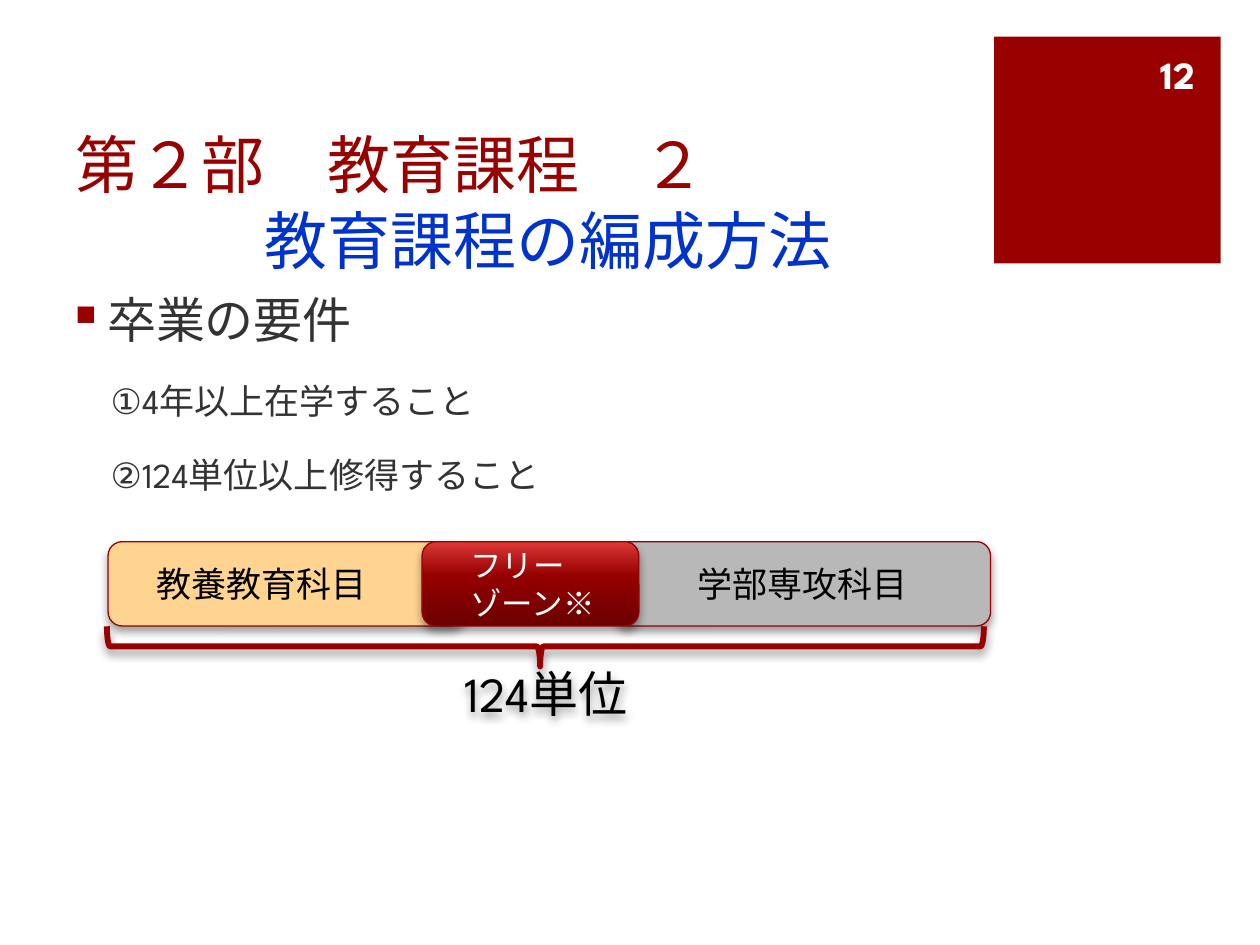
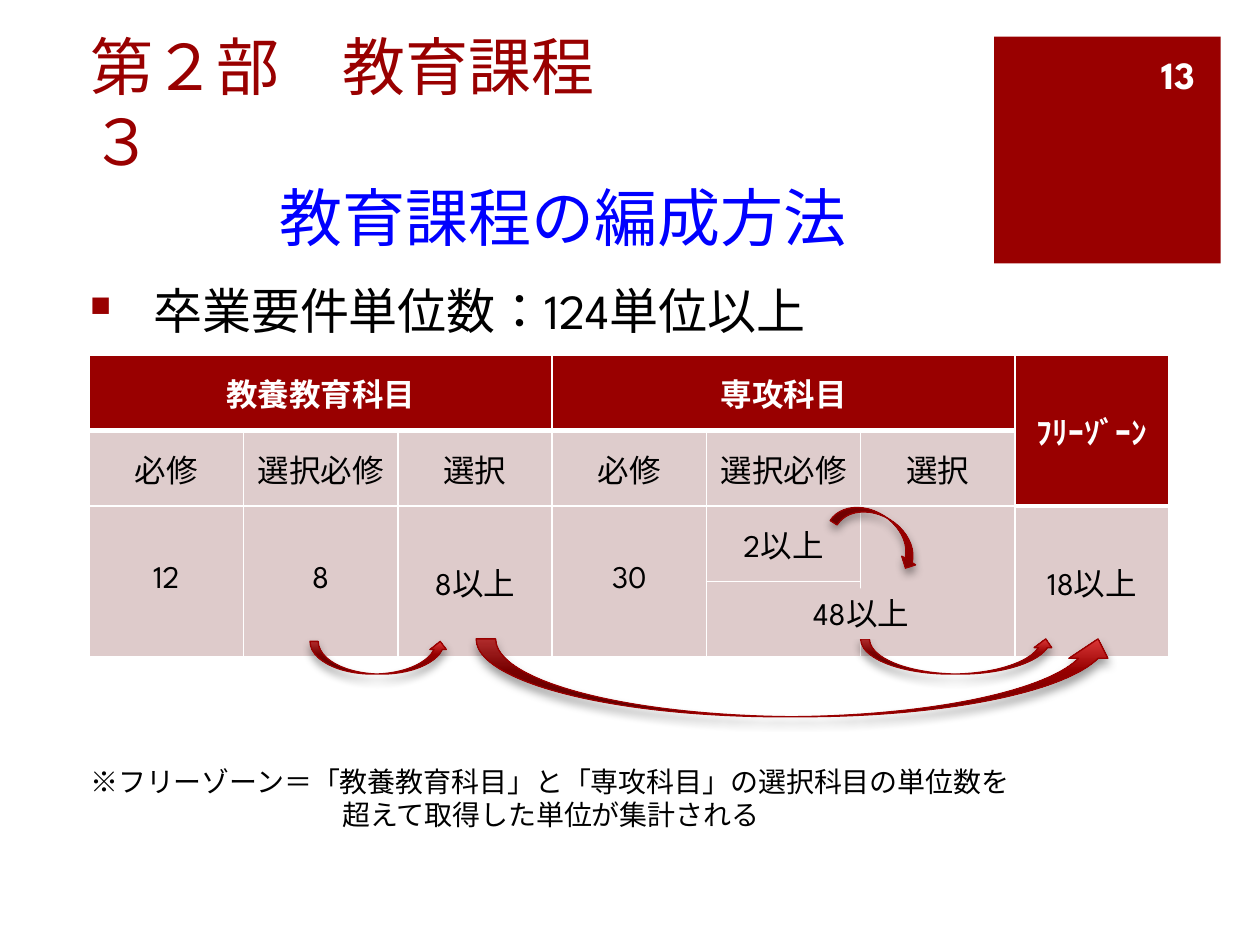
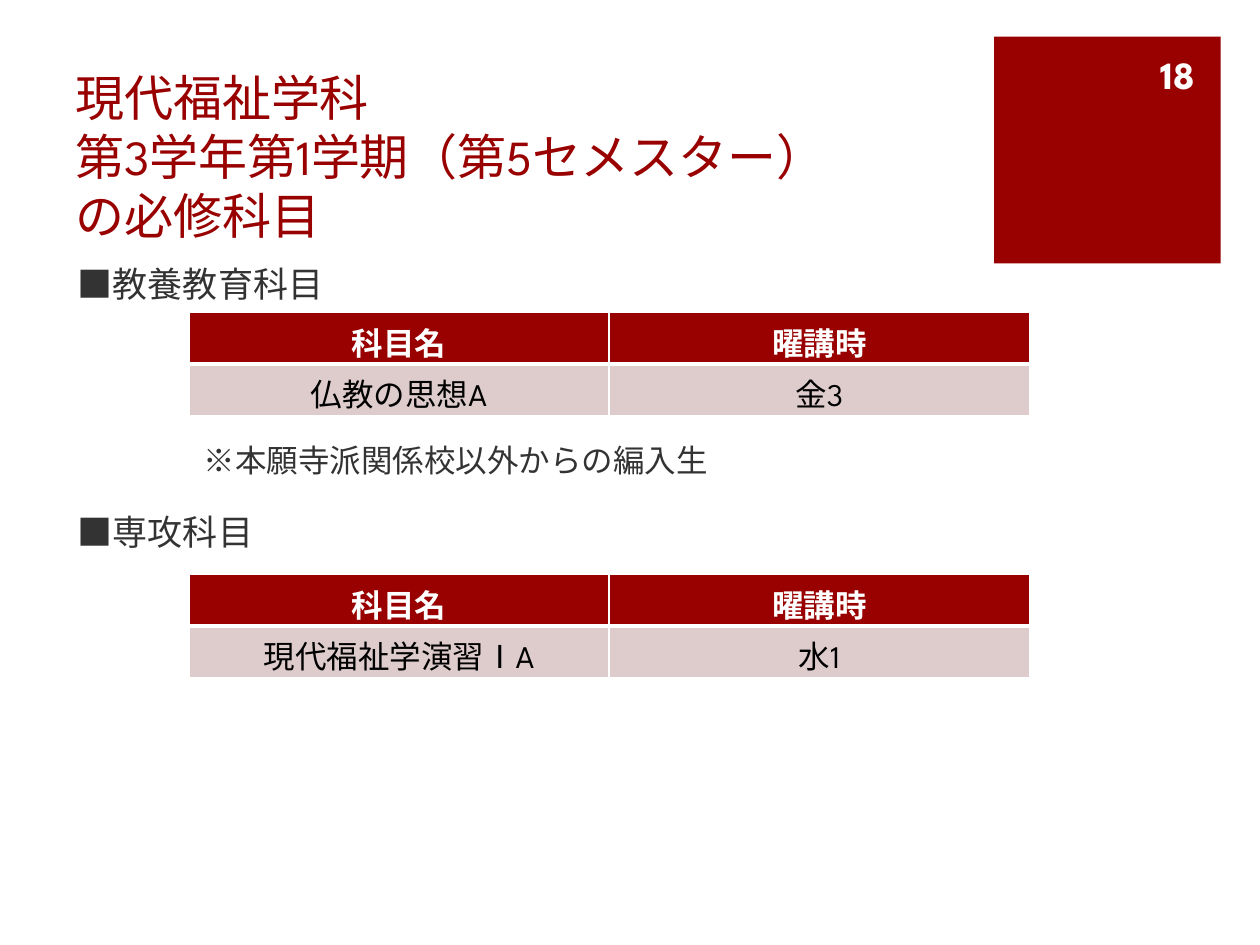
from copy import deepcopy
from dataclasses import dataclass

from lxml import etree
from pptx import Presentation
from pptx.dml.color import RGBColor
from pptx.enum.lang import MSO_LANGUAGE_ID
from pptx.enum.shapes import MSO_SHAPE
from pptx.enum.text import MSO_ANCHOR, PP_ALIGN
from pptx.oxml.ns import qn
from pptx.util import Cm, Pt

RECT, ROUNDED = MSO_SHAPE.RECTANGLE, MSO_SHAPE.ROUNDED_RECTANGLE
BRACE = MSO_SHAPE.LEFT_BRACE
UP_ARROW, DOWN_ARROW = MSO_SHAPE.CURVED_UP_ARROW, MSO_SHAPE.CURVED_DOWN_ARROW
LEFT, CENTER, RIGHT = PP_ALIGN.LEFT, PP_ALIGN.CENTER, PP_ALIGN.RIGHT
TOP, MIDDLE, BOTTOM = MSO_ANCHOR.TOP, MSO_ANCHOR.MIDDLE, MSO_ANCHOR.BOTTOM
JAPANESE = MSO_LANGUAGE_ID.JAPANESE

FONT = "League Spartan"
CRIMSON = RGBColor(0x99, 0x00, 0x00)
COBALT = RGBColor(0x00, 0x33, 0xCC)
BLUE = RGBColor(0x00, 0x00, 0xFF)
CHARCOAL = RGBColor(0x33, 0x33, 0x33)
BLACK = RGBColor(0x00, 0x00, 0x00)
WHITE = RGBColor(0xFF, 0xFF, 0xFF)
APRICOT = RGBColor(0xFF, 0xD4, 0x91)
GRAY = RGBColor(0xB8, 0xB8, 0xB8)
PINK = RGBColor(0xDE, 0xCC, 0xCC)
ROSE = RGBColor(0xDE, 0xCB, 0xCB)
RED_GRADIENT = (
    (0, RGBColor(0x6C, 0x00, 0x00)),
    (0.6, RGBColor(0x96, 0x00, 0x00)),
    (1, RGBColor(0xDC, 0x38, 0x38)),
)


@dataclass(frozen=True)
class Box:
    """Left, top, width and height in centimetres."""
    left: float
    top: float
    width: float
    height: float

    def lengths(self) -> tuple:
        return Cm(self.left), Cm(self.top), Cm(self.width), Cm(self.height)


@dataclass(frozen=True)
class Line:
    """One paragraph; indent in centimetres, space before in points."""
    text: str
    size: float
    color: RGBColor = BLACK
    bold: bool = False
    align: PP_ALIGN = LEFT
    indent: float = 0
    before: float = 0
    bullet: bool = False


@dataclass(frozen=True)
class Block:
    """A filled shape of the diagram; no fill colour means the red gradient."""
    box: Box
    kind: MSO_SHAPE
    lines: tuple = ()
    fill: RGBColor | None = None
    rotation: float = 0


@dataclass(frozen=True)
class Span:
    """A merged range of table cells."""
    row: int
    column: int
    rows: int
    columns: int


def add_bullet(paragraph, indent: float) -> None:
    properties = paragraph._p.get_or_add_pPr()
    properties.set("indent", str(-Cm(indent)))
    color = etree.SubElement(properties, qn("a:buClr"))
    etree.SubElement(color, qn("a:srgbClr"), val=str(CRIMSON))
    etree.SubElement(properties, qn("a:buSzPct"), val="58000")
    etree.SubElement(properties, qn("a:buChar"), char="■")


def write_lines(frame, lines: tuple) -> None:
    for number, line in enumerate(lines):
        paragraph = frame.add_paragraph() if number else frame.paragraphs[0]
        paragraph.alignment = line.align
        paragraph.space_before = Pt(line.before)
        if line.indent:
            paragraph._p.get_or_add_pPr().set("marL", str(Cm(line.indent)))
        if line.bullet:
            add_bullet(paragraph, line.indent)
        run = paragraph.add_run()
        run.text = line.text
        font = run.font
        font.name, font.size, font.bold = FONT, Pt(line.size), line.bold
        font.color.rgb = line.color
        font.language_id = JAPANESE


def add_text(slide, box: Box, lines: tuple, anchor: MSO_ANCHOR = TOP):
    text_box = slide.shapes.add_textbox(*box.lengths())
    frame = text_box.text_frame
    frame.word_wrap = True
    frame.vertical_anchor = anchor
    write_lines(frame, lines)
    return text_box


def add_shadow(shape) -> None:
    shape.shadow.inherit = False
    effects = shape._element.spPr.find(qn("a:effectLst"))
    shadow = etree.SubElement(
        effects, qn("a:outerShdw"), blurRad=str(Pt(5.2)), dist=str(Pt(3)),
        dir="5400000", rotWithShape="0")
    color = etree.SubElement(shadow, qn("a:srgbClr"), val=str(BLACK))
    etree.SubElement(color, qn("a:alpha"), val="40000")


def fill_red_gradient(shape) -> None:
    shape.fill.gradient()
    shape.fill.gradient_angle = 90
    stops = shape._element.spPr.find(".//" + qn("a:gsLst"))
    stops.insert(1, deepcopy(stops[0]))
    for stop, (position, color) in zip(shape.fill.gradient_stops, RED_GRADIENT):
        stop.position = position
        stop.color.rgb = color


def add_plain_rectangle(slide, box: Box, color: RGBColor):
    rectangle = slide.shapes.add_shape(RECT, *box.lengths())
    rectangle.shadow.inherit = False
    rectangle.fill.solid()
    rectangle.fill.fore_color.rgb = color
    rectangle.line.fill.background()
    return rectangle


def add_block(slide, block: Block) -> None:
    shape = slide.shapes.add_shape(block.kind, *block.box.lengths())
    shape.rotation = block.rotation
    if block.fill is None:
        fill_red_gradient(shape)
    else:
        shape.fill.solid()
        shape.fill.fore_color.rgb = block.fill
    shape.line.color.rgb = CRIMSON
    shape.line.width = Pt(0.75)
    add_shadow(shape)
    shape.text_frame.vertical_anchor = MIDDLE
    write_lines(shape.text_frame, block.lines)


def add_brace(slide, box: Box) -> None:
    brace = slide.shapes.add_shape(BRACE, *box.lengths())
    brace.rotation = 270
    brace.adjustments[0], brace.adjustments[1] = 0.083, 0.494
    brace.fill.background()
    brace.line.color.rgb = CRIMSON
    brace.line.width = Pt(3.35)
    add_shadow(brace)


def style_cell(cell, fill: RGBColor, bottom: float) -> None:
    properties = cell._tc.get_or_add_tcPr()
    for edge, width in (("a:lnL", 1), ("a:lnR", 1), ("a:lnB", bottom)):
        border = etree.SubElement(properties, qn(edge), w=str(Pt(width)))
        color = etree.SubElement(border, qn("a:solidFill"))
        etree.SubElement(color, qn("a:srgbClr"), val=str(WHITE))
    cell.fill.solid()
    cell.fill.fore_color.rgb = fill


def add_grid(slide, left: float, top: float, column_width: float,
             row_height: float, rows: tuple, spans: tuple = (),
             headers: frozenset = frozenset(), anchor: MSO_ANCHOR = TOP) -> None:
    """Draw a table; row 0 and the cells in headers get the header style."""
    row_count, column_count = len(rows), len(rows[0])
    box = Box(left, top, column_width * column_count, row_height * row_count)
    table = slide.shapes.add_table(row_count, column_count, *box.lengths()).table
    for column in table.columns:
        column.width = Cm(column_width)
    for row in table.rows:
        row.height = Cm(row_height)
    for r, texts in enumerate(rows):
        for c, text in enumerate(texts):
            cell = table.cell(r, c)
            header = r == 0 or (r, c) in headers
            body_fill = PINK if r == 1 else ROSE
            style_cell(cell, CRIMSON if header else body_fill, 3 if header else 1)
            cell.vertical_anchor = anchor
            if text:
                color = WHITE if header else BLACK
                write_lines(cell.text_frame,
                            (Line(text, 18, color, header, CENTER),))
    for span in spans:
        last = table.cell(span.row + span.rows - 1, span.column + span.columns - 1)
        table.cell(span.row, span.column).merge(last)


def start_slide(deck, number: str, title_box: Box, title: tuple):
    """Add a blank slide with the numbered crimson square and its title."""
    slide = deck.slides.add_slide(deck.slide_layouts[6])
    add_plain_rectangle(slide, Box(20.04, 0.74, 4.57, 4.57), CRIMSON)
    add_text(slide, title_box, title, BOTTOM)
    add_text(slide, Box(22.94, 0.99, 1.4, 1.02),
             (Line(number, 22, WHITE, True, RIGHT),), MIDDLE)
    return slide


def curriculum_title(first_lines: tuple, topic_color: RGBColor) -> tuple:
    part = tuple(Line(text, 36, CRIMSON) for text in first_lines)
    return part + (Line("教育課程の編成方法", 36, topic_color, indent=3.81),)


def build_requirements(deck) -> None:
    title = curriculum_title(("第２部　教育課程　２",), COBALT)
    slide = start_slide(deck, "12", Box(1.27, 2.54, 18.75, 3.17), title)
    add_text(slide, Box(1.27, 5.71, 22.68, 12.22), (
        Line("卒業の要件", 28, CHARCOAL, indent=0.64, bullet=True),
        Line("①4年以上在学すること", 20, CHARCOAL, indent=0.71, before=18),
        Line("②124単位以上修得すること", 20, CHARCOAL, indent=0.71, before=18),
    ))
    top, height = 10.92, 1.7
    for block in (
        Block(Box(2.18, top, 7.19, height), ROUNDED,
              (Line("教養教育科目", 20, indent=0.64),), APRICOT),
        Block(Box(12.4, top, 7.57, height), ROUNDED,
              (Line("学部専攻科目", 20, align=CENTER),), GRAY),
        Block(Box(8.51, top, 4.37, height), ROUNDED,
              tuple(Line(text, 18, WHITE, indent=0.64)
                    for text in ("フリー", "ゾーン※"))),
    ):
        add_block(slide, block)
    add_brace(slide, Box(10.59, 4.19, 0.81, 17.68))
    total = add_text(slide, Box(8.23, 13.03, 5.56, 1.88),
                     (Line("124単位", 28, align=CENTER),), MIDDLE)
    add_shadow(total)


def build_credits(deck) -> None:
    title = curriculum_title(("第２部　教育課程", "３"), BLUE)
    slide = start_slide(deck, "13", Box(1.57, 1.57, 18.41, 3.68), title)
    add_text(slide, Box(1.57, 5.44, 20.42, 11.53), (
        Line("卒業要件単位数：124単位以上", 28, indent=1.27, bullet=True),
        Line("※フリーゾーン＝「教養教育科目」と「専攻科目」の選択科目の単位数を",
             16, before=243),
        Line("超えて取得した単位が集計される", 16, indent=5.08),
    ), MIDDLE)
    kinds = ("必修", "選択必修", "選択")
    add_grid(
        slide, 1.8, 7.16, 3.11, 1.52,
        (
            ("教養教育科目", "", "", "専攻科目", "", "", "ﾌﾘｰｿﾞｰﾝ"),
            kinds * 2 + ("",),
            ("12", "8", "8以上", "30", "2以上", "", "18以上"),
            ("",) * 7,
        ),
        spans=(Span(0, 0, 1, 3), Span(0, 3, 1, 3), Span(0, 6, 2, 1))
        + tuple(Span(2, column, 2, 1) for column in (0, 1, 2, 3, 5, 6)),
        headers=frozenset({(1, 6)}), anchor=MIDDLE)
    for box in (Box(6.25, 12.93, 2.79, 0.66), Box(9.6, 12.88, 12.93, 1.57),
                Box(17.35, 12.88, 3.91, 0.71)):
        add_block(slide, Block(box, UP_ARROW))
    shared_credits = add_plain_rectangle(slide, Box(14.58, 11.86, 5.56, 1.02), ROSE)
    shared_credits.text_frame.vertical_anchor = TOP
    write_lines(shared_credits.text_frame, (Line("48以上", 18, align=CENTER),))
    add_block(slide, Block(Box(16.76, 10.41, 1.96, 0.66), DOWN_ARROW, rotation=32.3))


def build_required_courses(deck) -> None:
    title = tuple(Line(text, 28, CRIMSON) for text in (
        "現代福祉学科", "第3学年第1学期（第5セメスター）", "の必修科目"))
    slide = start_slide(deck, "18", Box(1.27, 1.32, 17.68, 3.73), title)
    add_text(slide, Box(1.32, 5.16, 18.08, 13.82), (
        Line("■教養教育科目", 20, CHARCOAL),
        Line("※本願寺派関係校以外からの編入生", 18, CHARCOAL, indent=2.54, before=78.5),
        Line("■専攻科目", 20, CHARCOAL, before=18),
    ))
    for top, course in ((11.58, ("現代福祉学演習ⅠA", "水1")),
                        (6.3, ("仏教の思想A", "金3"))):
        add_grid(slide, 3.81, top, 8.47, 1.04, (("科目名", "曜講時"), course))


def main() -> None:
    deck = Presentation()
    deck.slide_width, deck.slide_height = Cm(25.4), Cm(19.05)
    build_requirements(deck)
    build_credits(deck)
    build_required_courses(deck)
    deck.save("out.pptx")


if __name__ == "__main__":
    main()
